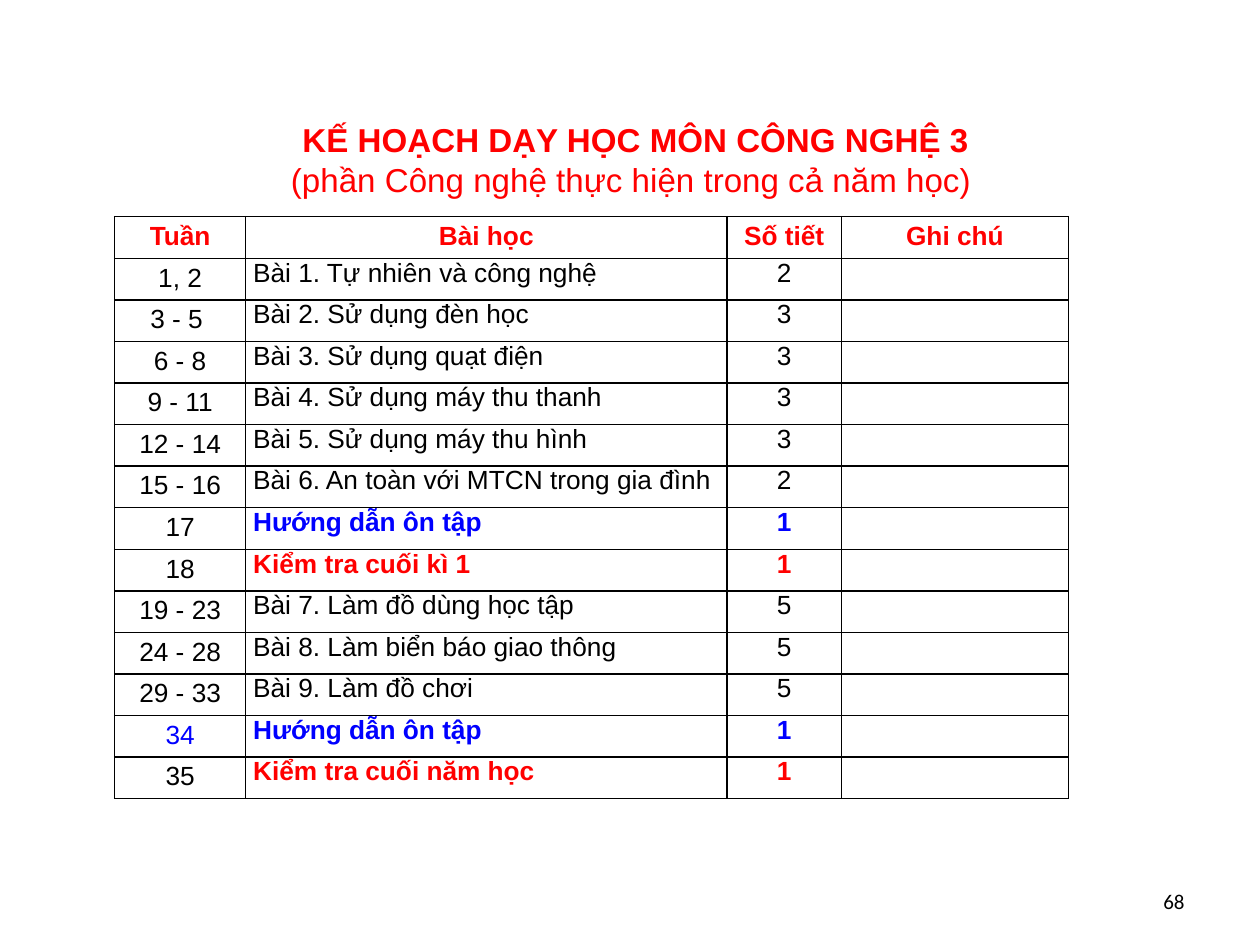
from lxml import etree
from pptx import Presentation
from pptx.dml.color import RGBColor
from pptx.enum.text import MSO_ANCHOR as Anchor, PP_ALIGN as Align
from pptx.oxml.ns import qn
from pptx.util import Inches, Pt

COLORS = {"red": "FF0000", "blue": "0000FF", "black": "000000", "white": "FFFFFF"}
COLUMN_WIDTHS = (1.04, 3.82, 0.91, 1.8)
ROW_HEIGHT = 0.325
HEADINGS = ("Tuần", "Bài học", "Số tiết", "Ghi chú")
# week, lesson, periods, week colour, lesson colour
PLAN = [
    ("1, 2", "Bài 1. Tự nhiên và công nghệ", "2", "black", "black"),
    ("3 - 5 ", "Bài 2. Sử dụng đèn học", "3", "black", "black"),
    ("6 - 8", "Bài 3. Sử dụng quạt điện", "3", "black", "black"),
    ("9 - 11", "Bài 4. Sử dụng máy thu thanh", "3", "black", "black"),
    ("12 - 14", "Bài 5. Sử dụng máy thu hình", "3", "black", "black"),
    ("15 - 16", "Bài 6. An toàn với MTCN trong gia đình", "2", "black", "black"),
    ("17", "Hướng dẫn ôn tập", "1", "black", "blue"),
    ("18", "Kiểm tra cuối kì 1", "1", "black", "red"),
    ("19 - 23", "Bài 7. Làm đồ dùng học tập", "5", "black", "black"),
    ("24 - 28", "Bài 8. Làm biển báo giao thông", "5", "black", "black"),
    ("29 - 33", "Bài 9. Làm đồ chơi", "5", "black", "black"),
    ("34", "Hướng dẫn ôn tập", "1", "blue", "blue"),
    ("35", "Kiểm tra cuối năm học", "1", "black", "red"),
]


def add_run(paragraph, text, size, color, bold=False, font="Arial"):
    run = paragraph.add_run()
    run.text = text
    run.font.name = font
    run.font.size = Pt(size)
    run.font.bold = bold
    run.font.color.rgb = RGBColor.from_string(COLORS[color])


def add_text_frame(slide, left, top, width, height):
    frame = slide.shapes.add_textbox(
        Inches(left), Inches(top), Inches(width), Inches(height)).text_frame
    frame.word_wrap = True
    frame.vertical_anchor = Anchor.MIDDLE
    return frame


def add_title(slide, left, top, width, height):
    heading = add_text_frame(slide, left, top, width, height).paragraphs[0]
    heading.alignment = Align.CENTER
    add_run(heading, " KẾ HOẠCH DẠY HỌC MÔN CÔNG NGHỆ 3", 18.9, "red", bold=True)
    heading.add_line_break()
    add_run(heading, "(phần Công nghệ thực hiện trong cả năm học)", 18.9, "red")


def style_cell(cell, side, end):
    """Set the margins, the black border and the white fill."""
    cell.margin_left = cell.margin_right = Inches(side)
    cell.margin_top = cell.margin_bottom = Inches(end)
    properties = cell._tc.get_or_add_tcPr()
    for edge in ("a:lnL", "a:lnR", "a:lnT", "a:lnB"):
        line = etree.SubElement(properties, qn(edge), w=str(Pt(1)))
        fill = etree.SubElement(line, qn("a:solidFill"))
        etree.SubElement(fill, qn("a:srgbClr"), val=COLORS["black"])
    cell.fill.solid()
    cell.fill.fore_color.rgb = RGBColor.from_string(COLORS["white"])


def write_cell(cell, text, color, bold, align=Align.CENTER, space_after=0):
    paragraph = cell.text_frame.paragraphs[0]
    paragraph.alignment = align
    paragraph.space_after = Pt(space_after)
    add_run(paragraph, text, 15, color, bold)


def add_plan_table(slide, left, top):
    row_count = len(PLAN) + 1
    table = slide.shapes.add_table(
        row_count, len(HEADINGS), Inches(left), Inches(top),
        Inches(sum(COLUMN_WIDTHS)), Inches(ROW_HEIGHT * row_count)).table
    table.first_row = table.horz_banding = False
    for column, width in zip(table.columns, COLUMN_WIDTHS):
        column.width = Inches(width)
    for row_index, row in enumerate(table.rows):
        row.height = Inches(ROW_HEIGHT)
        for column_index, cell in enumerate(row.cells):
            roomy = row_index == 0 or column_index == 0
            style_cell(cell, *((0.07, 0.04) if roomy else (0.06, 0)))

    for column_index, heading in enumerate(HEADINGS):
        write_cell(table.cell(0, column_index), heading, "red", True)
    for row_index, (week, lesson, periods, week_color, color) in enumerate(PLAN, 1):
        milestone = color != "black"
        lesson_align = Align.LEFT if milestone else Align.JUSTIFY
        space_after = 0 if milestone else 2
        write_cell(table.cell(row_index, 0), week, week_color, False)
        write_cell(table.cell(row_index, 1), lesson, color, milestone,
                   lesson_align, space_after)
        write_cell(table.cell(row_index, 2), periods, color, milestone,
                   space_after=space_after)


def add_page_number(slide, left, top, width, height):
    number = add_text_frame(slide, left, top, width, height).paragraphs[0]
    number.alignment = Align.RIGHT
    add_run(number, "68", 12, "black", font="Calibri")


def main():
    deck = Presentation()
    deck.slide_width, deck.slide_height = Inches(10), Inches(7.5)
    slide = deck.slides.add_slide(deck.slide_layouts[6])
    add_title(slide, 1.3, 1, 7.42, 0.53)
    add_plan_table(slide, 0.91, 1.72)
    add_page_number(slide, 7.17, 6.95, 2.33, 0.4)
    deck.save("out.pptx")


if __name__ == "__main__":
    main()
